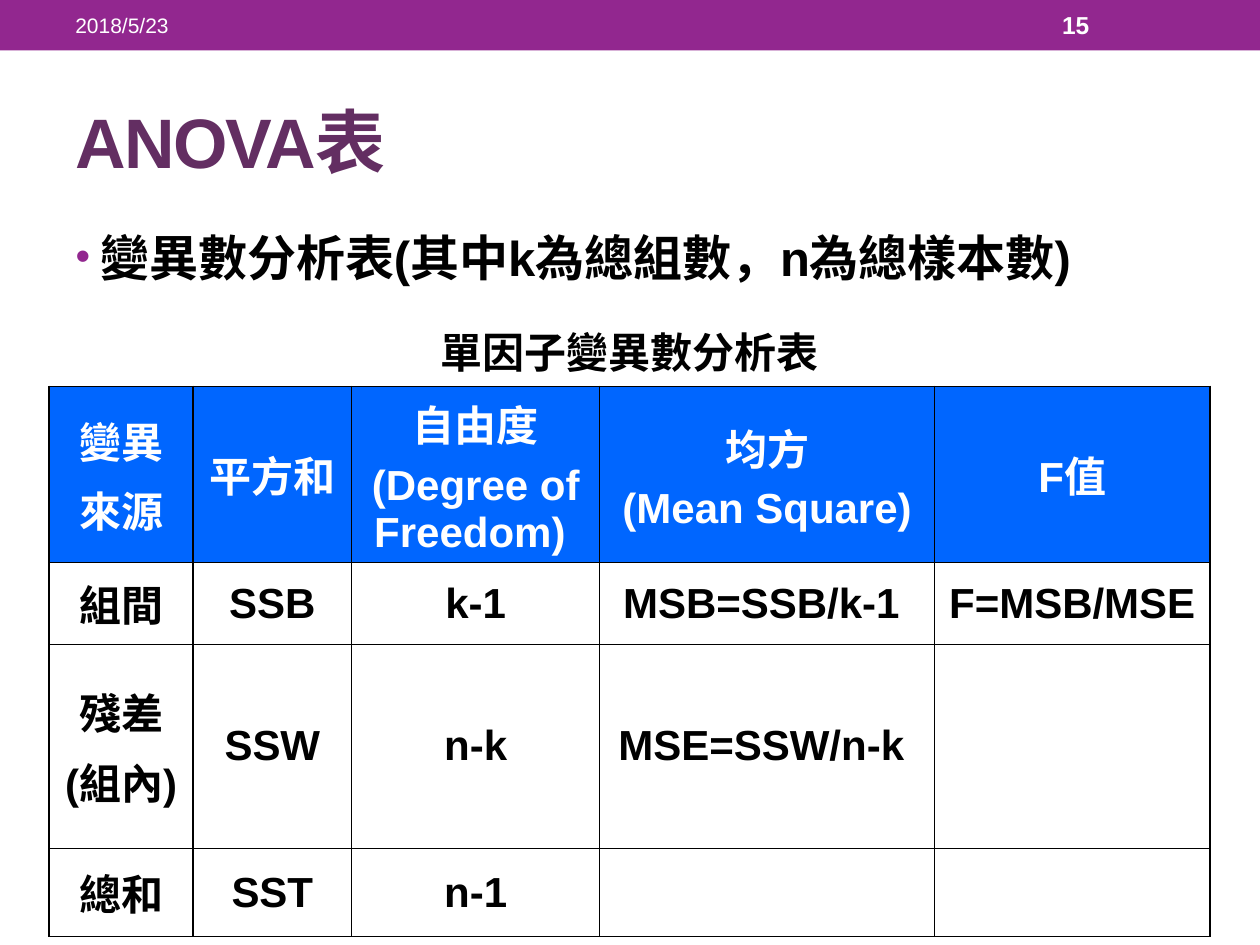
from lxml import etree
from pptx import Presentation
from pptx.dml.color import RGBColor
from pptx.enum.shapes import MSO_SHAPE
from pptx.enum.text import MSO_ANCHOR, MSO_AUTO_SIZE, PP_ALIGN
from pptx.oxml.ns import qn
from pptx.util import Cm, Pt

LEFT, CENTER = PP_ALIGN.LEFT, PP_ALIGN.CENTER
TOP, MIDDLE = MSO_ANCHOR.TOP, MSO_ANCHOR.MIDDLE
RECTANGLE, NO_AUTOFIT = MSO_SHAPE.RECTANGLE, MSO_AUTO_SIZE.NONE

FONT = "Arial"
PURPLE, PLUM, BLUE = "92278F", "632E62", "0066FF"
BLACK, WHITE = "000000", "FFFFFF"

DATE, PAGE = "2018/5/23", "15"
TITLE = "ANOVA表"
DEFINITION = "變異數分析表(其中k為總組數，n為總樣本數)"
CAPTION = "單因子變異數分析表"
ANOVA_ROWS = [
    ["變異\n來源", "平方和", "自由度\n(Degree of Freedom) ", "均方\n(Mean Square)", "F值"],
    ["組間", "SSB", "k-1", "MSB=SSB/k-1 ", "F=MSB/MSE "],
    ["殘差\n(組內)", "SSW", "n-k", "MSE=SSW/n-k ", ""],
    ["總和", "SST", "n-1", "", ""],
]
COLUMN_WIDTHS = [2.9, 3.2, 5, 6.75, 5.55]
ROW_HEIGHTS = [1.47, 3.55, 1.65, 4.11, 1.78]
MARGIN, CONTENT_WIDTH = 1.27, 22.86
BAND_HEIGHT = 1.02


def rgb(color):
    return RGBColor.from_string(color)


def write(frame, text, size=24, color=BLACK, bold=True, align=LEFT,
          anchor=MIDDLE, before=0, spacing=0):
    frame.word_wrap = True
    frame.vertical_anchor = anchor
    frame.text = text
    for paragraph in frame.paragraphs:
        paragraph.alignment = align
        paragraph.space_before = Pt(before)
        paragraph.font.size = Pt(size)
        for run in paragraph.runs:
            run.font.name = FONT
            run.font.size = Pt(size)
            run.font.bold = bold
            run.font.color.rgb = rgb(color)
            if spacing:
                run.font._element.set("spc", str(spacing * 100))


def place(shape, left, top, width, height):
    shape.left, shape.top = Cm(left), Cm(top)
    shape.width, shape.height = Cm(width), Cm(height)


def add_bullet(paragraph, color, percent, symbol, indent):
    properties = paragraph._p.get_or_add_pPr()
    properties.set("marL", str(Cm(indent)))
    properties.set("indent", str(-Cm(indent)))
    bullet_color = etree.SubElement(properties, qn("a:buClr"))
    etree.SubElement(bullet_color, qn("a:srgbClr"), val=color)
    etree.SubElement(properties, qn("a:buSzPct"), val=str(percent * 1000))
    etree.SubElement(properties, qn("a:buFont"), typeface=FONT)
    etree.SubElement(properties, qn("a:buChar"), char=symbol)


def add_borders(cell, color):
    properties = cell._tc.get_or_add_tcPr()
    for position, side in enumerate(("lnL", "lnR", "lnT", "lnB")):
        line = etree.Element(qn("a:" + side), w=str(Pt(1)))
        fill = etree.SubElement(line, qn("a:solidFill"))
        etree.SubElement(fill, qn("a:srgbClr"), val=color)
        properties.insert(position, line)


def add_header(slide):
    band = slide.shapes.add_shape(RECTANGLE, 0, 0, Cm(25.4), Cm(BAND_HEIGHT))
    band.shadow.inherit = False
    band.fill.solid()
    band.fill.fore_color.rgb = rgb(PURPLE)
    band.line.fill.background()
    for text, left, width, size, bold in (
        (DATE, MARGIN, 8.05, 12, False),
        (PAGE, 21.16, 2.97, 14, True),
    ):
        label = slide.shapes.add_textbox(Cm(left), Cm(0.05), Cm(width), Cm(0.91))
        write(label.text_frame, text, size=size, color=WHITE, bold=bold)


def add_anova_table(slide):
    table = slide.shapes.add_table(
        len(ROW_HEIGHTS), len(COLUMN_WIDTHS), Cm(0.99), Cm(6.32),
        Cm(sum(COLUMN_WIDTHS)), Cm(sum(ROW_HEIGHTS))).table
    table.first_row = table.horz_banding = False
    for column, width in zip(table.columns, COLUMN_WIDTHS):
        column.width = Cm(width)
    for row, height in zip(table.rows, ROW_HEIGHTS):
        row.height = Cm(height)

    caption = table.cell(0, 0)
    caption.merge(table.cell(0, len(COLUMN_WIDTHS) - 1))
    caption.fill.background()
    write(caption.text_frame, CAPTION, align=CENTER, anchor=TOP, before=4.8)

    for row_number, entries in enumerate(ANOVA_ROWS, 1):
        is_heading = row_number == 1
        for column_number, entry in enumerate(entries):
            cell = table.cell(row_number, column_number)
            if is_heading:
                cell.fill.solid()
                cell.fill.fore_color.rgb = rgb(BLUE)
            else:
                cell.fill.background()
            add_borders(cell, BLACK)
            write(cell.text_frame, entry, align=CENTER, before=4.8,
                  color=WHITE if is_heading else BLACK)
            cell.vertical_anchor = MIDDLE


def main():
    deck = Presentation()
    deck.slide_width, deck.slide_height = Cm(25.4), Cm(19.05)
    slide = deck.slides.add_slide(deck.slide_layouts[1])
    title, body = slide.placeholders

    add_header(slide)
    place(title, MARGIN, 1.47, CONTENT_WIDTH, 2.74)
    write(title.text_frame, TITLE, size=40, color=PLUM, spacing=-1)
    place(body, MARGIN, 4.45, CONTENT_WIDTH, 13.54)
    write(body.text_frame, DEFINITION, size=28, anchor=TOP, before=5.6)
    body.text_frame.auto_size = title.text_frame.auto_size = NO_AUTOFIT
    add_bullet(body.text_frame.paragraphs[0], PURPLE, 85, "•", 0.5)
    add_anova_table(slide)
    deck.save("out.pptx")


if __name__ == "__main__":
    main()
